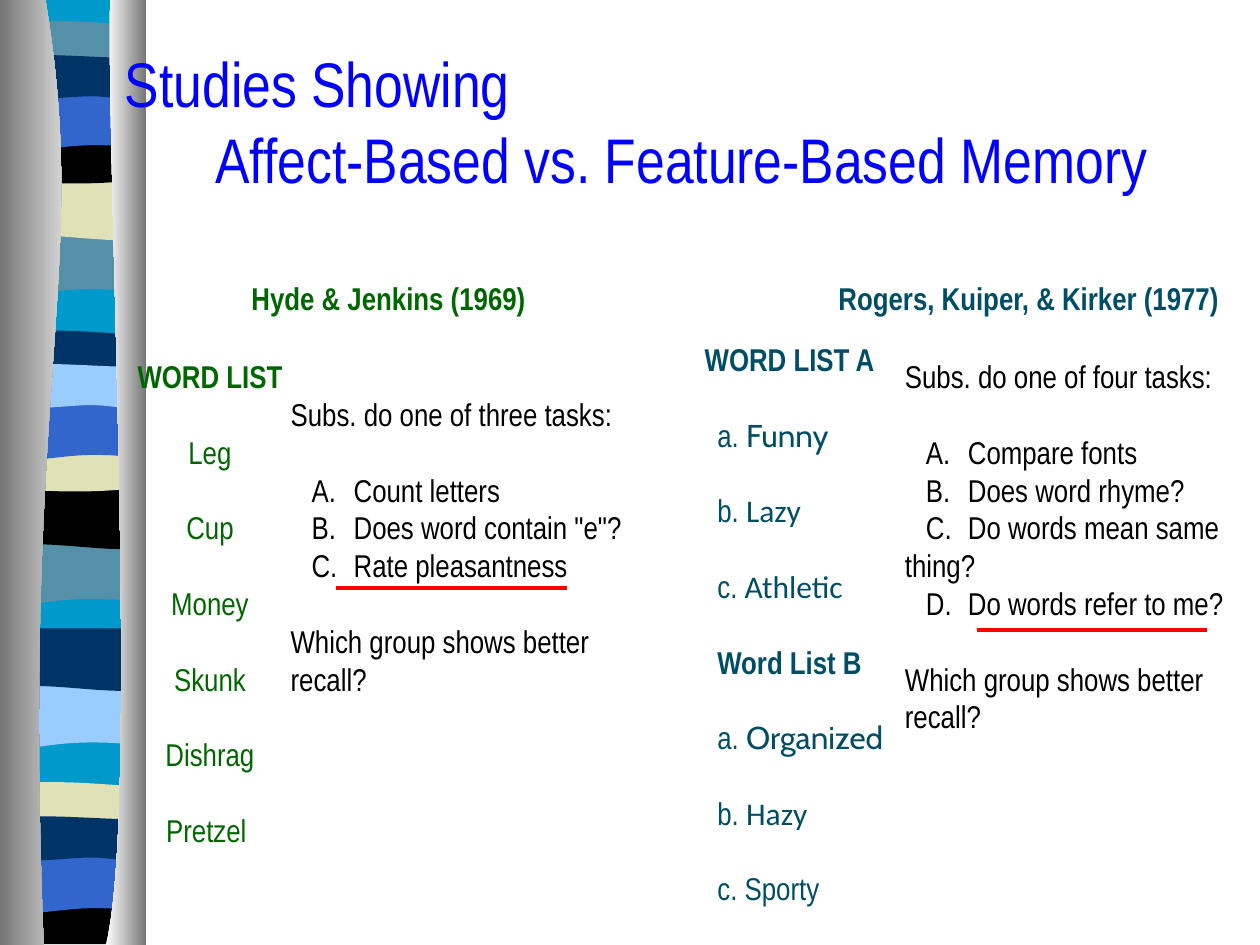
from dataclasses import dataclass

from lxml import etree
from pptx import Presentation
from pptx.dml.color import RGBColor
from pptx.enum.shapes import MSO_CONNECTOR
from pptx.enum.text import MSO_AUTO_SIZE, PP_ALIGN
from pptx.oxml.ns import qn
from pptx.util import Pt

LEFT, CENTER = PP_ALIGN.LEFT, PP_ALIGN.CENTER
FIT = MSO_AUTO_SIZE.SHAPE_TO_FIT_TEXT
STRAIGHT = MSO_CONNECTOR.STRAIGHT

FONT = "Arial Narrow"
BLUE, GREEN, TEAL, BLACK, RED = "0000FF", "006600", "004D66", "000000", "FF0000"
SLATE, SAND, NAVY, ROYAL, SKY = "5490A8", "E1E1B7", "003366", "3366CC", "99CCFF"
CYAN, GREY, WHITE = "0099CC", "767676", "FFFFFF"
BODY_SIZE, BLANK_LINE = 18, 21.6
BAND_LEFT, BAND_RIGHT = 4, 82

Point = tuple[float, float]
Edge = list[Point]


@dataclass
class Wave:
    height: float
    bottom: list[Edge]
    top: list[Edge]


@dataclass
class Band:
    y: float
    wave: Wave
    color: str


@dataclass
class Line:
    text: str
    gap: bool = False
    align: PP_ALIGN = LEFT
    bold: bool = False
    margin: float = 0
    indent: float = 0
    tab: float = 0
    word: str = ""
    word_font: str = FONT
    size: float = BODY_SIZE


@dataclass
class Block:
    box: tuple[float, float, float, float]
    color: str
    lines: list[Line]


FLAT = [[(82, 0)]]
SWELL = [[(52, 3.5), (65, 0), (82, 0)]]
SLAB = Wave(34, [[(28, 28), (17, 40), (4, 34)]], FLAT)
ROLL = Wave(34, [[(69, 39.5), (28, 30), (4, 34)]], FLAT)
RIBBON = Wave(17.5, [[(69, 21), (17, 21), (4, 17.5)]],
              [[(9, -4), (21, -3), (34, -3)], [(47, -3), (72, -1), (82, 0)]])
CAP = Wave(23.5, [[(69, 28), (17, 28), (4, 23.5)]], SWELL)
ARCH = Wave(34, [[(70, 30), (65, 30), (52, 30)], [(39, 30), (16, 34), (4, 34)]], FLAT)
FOLD = Wave(22, [[(77, 26), (65, 22), (52, 22)], [(39, 22), (12, 26), (4, 22)]],
            [[(15, -3.5), (57, 0), (70, 0)], [(83, 0), (79, 0), (82, 0)]])
FLOOR = Wave(27, [[(4, 27)]], SWELL)
BACKING = Wave(538, [[(4, 538)]], FLAT)

BANDS = [
    Band(0, BACKING, CYAN),
    Band(133, SLAB, SLATE), Band(101.5, ROLL, SAND), Band(15, RIBBON, SLATE),
    Band(78, CAP, BLACK), Band(53, ARCH, ROYAL), Band(33, FOLD, NAVY),
    Band(310, SLAB, SLATE), Band(278, ROLL, BLACK), Band(192, RIBBON, NAVY),
    Band(254, CAP, SAND), Band(230, ARCH, ROYAL), Band(209.5, FOLD, SKY),
    Band(392, SLAB, SKY), Band(359, ROLL, NAVY), Band(450, RIBBON, SAND),
    Band(512.5, FLOOR, BLACK), Band(489, ARCH, ROYAL), Band(468, FOLD, NAVY),
]


def heading(text: str) -> Line:
    return Line(text, align=CENTER, bold=True)


def entry(text: str) -> Line:
    return Line(text, gap=True, align=CENTER)


def lettered(letter: str, word: str, font: str) -> Line:
    return Line(f"{letter}. ", gap=True, margin=20.7, word=word, word_font=font)


def task(letter: str, text: str) -> Line:
    return Line(f"{letter}.\t{text}", gap=letter == "A", indent=12, tab=32.3)


QUESTION = Line("Which group shows better recall?", gap=True)

BLOCKS = [
    Block((61, 22, 642, 94.5), BLUE, [
        Line("Studies Showing\vAffect-Based vs. Feature-Based Memory",
             margin=55, indent=-51.7, size=36)]),
    Block((95.5, 156, 253, 30), GREEN, [heading("Hyde & Jenkins (1969)")]),
    Block((51, 200.6, 138, 291), GREEN, [heading("WORD LIST")] + [
        entry(w) for w in ("Leg", "Cup", "Money", "Skunk", "Dishrag", "Pretzel ")]),
    Block((159, 222.2, 204, 181), BLACK, [
        Line("Subs. do one of three tasks:"),
        task("A", "Count letters"),
        task("B", 'Does word contain "e"?'),
        task("C", "Rate pleasantness"),
        QUESTION]),
    Block((461.3, 156, 253, 30), TEAL, [heading("Rogers, Kuiper, & Kirker (1977)")]),
    Block((382.2, 190.8, 138, 334), TEAL, [
        heading("WORD LIST A"),
        lettered("a", "Funny", "Cabin"),
        lettered("b", "Lazy", "Calibri"),
        lettered("c", "Athletic", "Calibri"),
        Line("Word List B", gap=True, align=CENTER, bold=True),
        lettered("a", "Organized", "Cabin"),
        lettered("b", "Hazy", "Calibri"),
        lettered("c", "Sporty", FONT)]),
    Block((510, 200.6, 204, 225), BLACK, [
        Line("Subs. do one of four tasks:"),
        task("A", "Compare fonts"),
        task("B", "Does word rhyme?"),
        task("C", "Do words mean same thing?"),
        task("D", "Do words refer to me?"),
        QUESTION]),
]


def rgb(color: str) -> RGBColor:
    return RGBColor.from_string(color)


def add_outline(s, start: Point, edges: list[Edge], *colors: str, dy: float = 0) -> None:
    points = [(Pt(x), Pt(y + dy)) for edge in edges for x, y in edge]
    builder = s.shapes.build_freeform(Pt(start[0]), Pt(start[1] + dy), scale=1.0)
    builder.add_line_segments(points, close=True)
    sp = builder.convert_to_shape()
    segments = iter(list(sp._element.iter(qn("a:lnTo"))))
    for edge in edges:
        first, *others = [next(segments) for _ in edge]
        if others:
            first.tag = qn("a:cubicBezTo")
            for other in others:
                first.append(other[0])
                other.getparent().remove(other)
    sp.shadow.inherit = False
    sp.line.fill.background()
    if len(colors) == 1:
        sp.fill.solid()
        sp.fill.fore_color.rgb = rgb(colors[0])
        return
    sp.fill.gradient()
    sp.fill.gradient_angle = 0
    for stop, color in zip(sp.fill.gradient_stops, colors):
        stop.color.rgb = rgb(color)


def add_band(s, band: Band) -> None:
    wave = band.wave
    edges = wave.bottom + [[(BAND_LEFT, 0)]] + wave.top
    add_outline(s, (BAND_RIGHT, wave.height), edges, band.color, dy=band.y)


def add_block(s, block: Block) -> None:
    tf = s.shapes.add_textbox(*map(Pt, block.box)).text_frame
    tf.word_wrap = True
    tf.auto_size = FIT
    for i, line in enumerate(block.lines):
        p = tf.add_paragraph() if i else tf.paragraphs[0]
        p.text = line.text
        p.alignment = line.align
        p.font.size = Pt(line.size)
        p.font.bold = line.bold
        p.font.color.rgb = rgb(block.color)
        if line.gap:
            p.space_before = Pt(BLANK_LINE)
        pPr = p._p.get_or_add_pPr()
        pPr.set("marL", str(Pt(line.margin)))
        pPr.set("indent", str(Pt(line.indent)))
        if line.tab:
            tabs = etree.Element(qn("a:tabLst"))
            etree.SubElement(tabs, qn("a:tab"), pos=str(Pt(line.tab)), algn="l")
            pPr.find(qn("a:defRPr")).addprevious(tabs)
        if line.word_font == FONT:
            p.font.name = FONT
            p.text += line.word
        else:
            p.runs[0].font.name = FONT
            r = p.add_run()
            r.text = line.word
            r.font.name = line.word_font


def add_underline(s, x: float, y: float, width: float) -> None:
    sp = s.shapes.add_connector(STRAIGHT, Pt(x), Pt(y), Pt(x + width), Pt(y))
    sp.line.color.rgb = rgb(RED)
    sp.line.width = Pt(2.25)
    etree.SubElement(sp._element.spPr, qn("a:effectLst"))


def main() -> None:
    prs = Presentation()
    prs.slide_width, prs.slide_height = Pt(720), Pt(540)
    s = prs.slides.add_slide(prs.slide_layouts[6])
    for band in BANDS:
        add_band(s, band)
    add_outline(s, (26, 0), [[(52, 156), (12, 213), (25, 540)], [(0, 540)], [(0, 0)]],
                GREY, WHITE)
    add_outline(s, (63, 0), [[(60.5, 90), (80, 465), (60.5, 540)], [(83.5, 540)],
                             [(83.5, 0)]], WHITE, GREY)
    for block in BLOCKS:
        add_block(s, block)
    add_underline(s, 192, 336, 132)
    add_underline(s, 558, 360, 132)
    prs.save("out.pptx")


if __name__ == "__main__":
    main()
